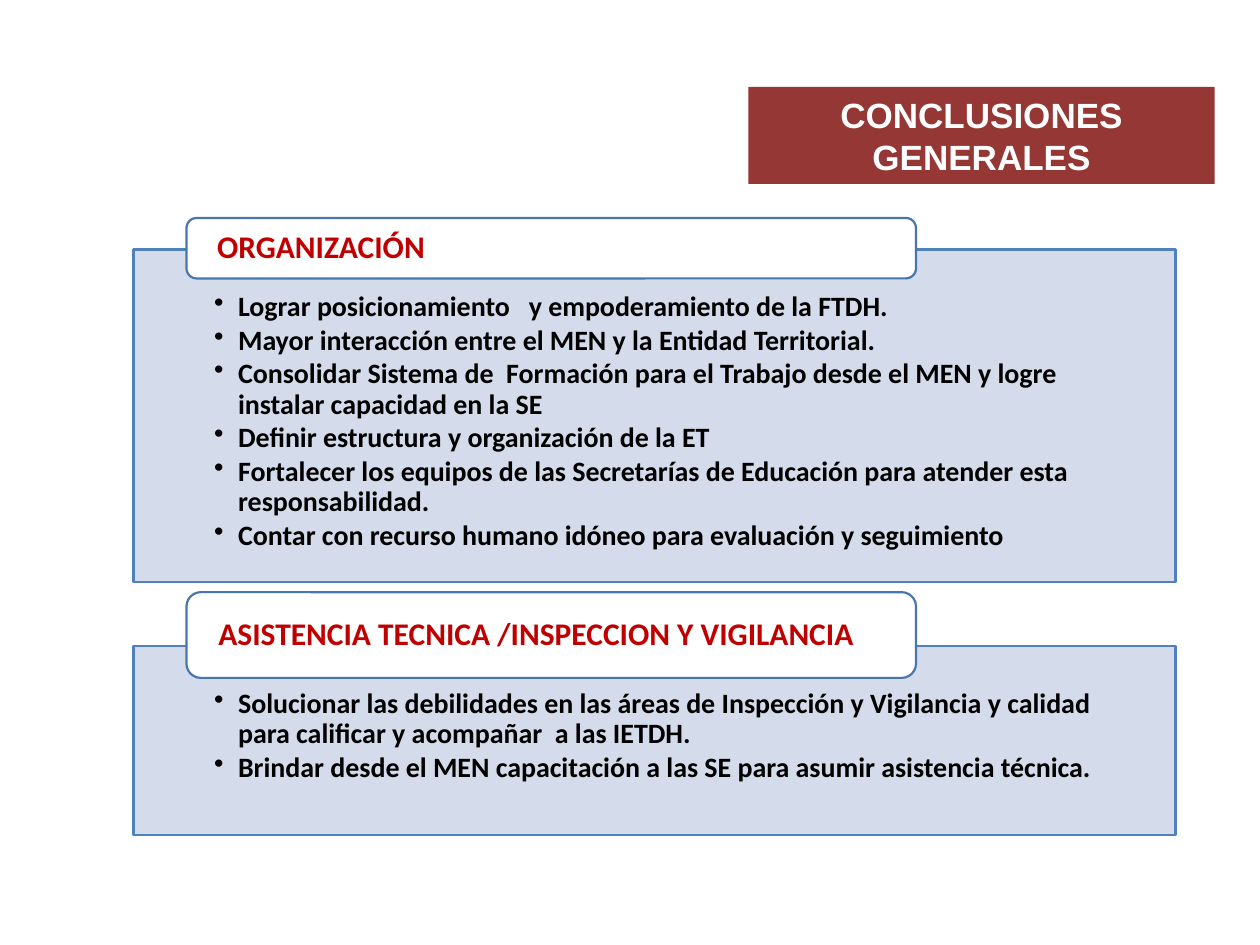
import pptx
import pptx.dml.color
import pptx.enum.shapes
import pptx.enum.text
import pptx.oxml
import pptx.oxml.ns
import pptx.util
from lxml import etree

Inches = pptx.util.Inches
Pt = pptx.util.Pt
Shapes = pptx.enum.shapes.MSO_SHAPE
Anchor = pptx.enum.text.MSO_ANCHOR
Align = pptx.enum.text.PP_ALIGN


def color(hex_value):
    return pptx.dml.color.RGBColor.from_string(hex_value)


class SlideBuilder:
    PANEL_FILL, PANEL_LINE = "D0D8E8", "4F81BD"
    HEADING_LINE, HEADING_TEXT = "4875AC", "C00000"
    BANNER, WHITE, BLACK = "953735", "FFFFFF", "000000"

    def __init__(self, slide):
        self.slide = slide

    def set_insets(self, frame, left, top, right, bottom):
        frame.margin_left, frame.margin_top = Inches(left), Inches(top)
        frame.margin_right, frame.margin_bottom = Inches(right), Inches(bottom)
        frame.word_wrap = True

    def fill_text(self, frame, lines, font, size, text_color, align, bullet=False):
        for index, line in enumerate(lines):
            paragraph = frame.paragraphs[0] if index == 0 else frame.add_paragraph()
            paragraph.text = line
            paragraph.alignment = align
            if bullet:
                self.add_bullet(paragraph)
            paragraph.font.name = font
            paragraph.font.size = Pt(size)
            paragraph.font.bold = True
            paragraph.font.color.rgb = color(text_color)

    def add_bullet(self, paragraph):
        paragraph.line_spacing = 0.9
        paragraph.space_after = Pt(2)
        properties = paragraph._p.get_or_add_pPr()
        properties.set("marL", str(Inches(0.19)))
        properties.set("indent", str(-Inches(0.19)))
        bullet = etree.SubElement(properties, pptx.oxml.ns.qn("a:buChar"))
        bullet.set("char", "•")

    def title(self, lines, left, top, width, height):
        shape = self.slide.shapes.title
        shape.left, shape.top = Inches(left), Inches(top)
        shape.width, shape.height = Inches(width), Inches(height)
        shape.fill.solid()
        shape.fill.fore_color.rgb = color(self.BANNER)
        frame = shape.text_frame
        frame.auto_size = pptx.enum.text.MSO_AUTO_SIZE.NONE
        frame.vertical_anchor = Anchor.MIDDLE
        self.set_insets(frame, 0.1, 0.05, 0.1, 0.05)
        self.fill_text(frame, lines, "Arial", 20, self.WHITE, Align.CENTER)

    def box(self, kind, left, top, width, height, fill, line):
        shape = self.slide.shapes.add_shape(
            kind, Inches(left), Inches(top), Inches(width), Inches(height))
        shape.shadow.inherit = False
        shape.fill.solid()
        shape.fill.fore_color.rgb = color(fill)
        shape.line.color.rgb = color(line)
        shape.line.width = Pt(1.25)
        return shape

    def panel(self, top, height, items):
        shape = self.box(Shapes.RECTANGLE, 1.06, top, 8.27, height,
                         self.PANEL_FILL, self.PANEL_LINE)
        # Panel fill is 90 % opaque
        fill_color = shape._element.spPr.find(
            pptx.oxml.ns.qn("a:solidFill")).find(pptx.oxml.ns.qn("a:srgbClr"))
        etree.SubElement(fill_color, pptx.oxml.ns.qn("a:alpha")).set("val", "90000")
        frame = shape.text_frame
        frame.vertical_anchor = Anchor.TOP
        self.set_insets(frame, 0.64, 0.34, 0.64, 0.12)
        self.fill_text(frame, items, "Calibri", 16, self.BLACK, Align.LEFT, bullet=True)

    def heading(self, text, top, height):
        shape = self.box(Shapes.ROUNDED_RECTANGLE, 1.48, top, 5.79, height,
                         self.WHITE, self.HEADING_LINE)
        frame = shape.text_frame
        frame.vertical_anchor = Anchor.MIDDLE
        self.set_insets(frame, 0.22, 0, 0.22, 0)
        self.fill_text(frame, [text], "Calibri", 18, self.HEADING_TEXT, Align.LEFT)
        frame.paragraphs[0].line_spacing = 0.9


def main():
    presentation = pptx.Presentation()
    presentation.slide_width, presentation.slide_height = Inches(10), Inches(7.5)
    slide = presentation.slides.add_slide(presentation.slide_layouts[5])
    builder = SlideBuilder(slide)

    # Title banner
    builder.title(["CONCLUSIONES", "GENERALES"], 5.94, 0.69, 3.7, 0.77)

    # Organisation
    builder.panel(1.98, 2.64, [
        "Lograr posicionamiento   y empoderamiento de la FTDH.",
        "Mayor interacción entre el MEN y la Entidad Territorial.",
        "Consolidar Sistema de  Formación para el Trabajo desde el MEN y logre "
        "instalar capacidad en la SE",
        "Definir estructura y organización de la ET",
        "Fortalecer los equipos de las Secretarías de Educación para atender esta "
        "responsabilidad.",
        "Contar con recurso humano idóneo para evaluación y seguimiento",
    ])
    builder.heading("ORGANIZACIÓN", 1.73, 0.48)

    # Technical assistance, inspection and oversight
    builder.panel(5.13, 1.5, [
        "Solucionar las debilidades en las áreas de Inspección y Vigilancia y calidad "
        "para calificar y acompañar  a las IETDH.",
        "Brindar desde el MEN capacitación a las SE para asumir asistencia técnica.",
    ])
    builder.heading("ASISTENCIA TECNICA /INSPECCION Y VIGILANCIA", 4.7, 0.68)

    presentation.save("out.pptx")


if __name__ == "__main__":
    main()
